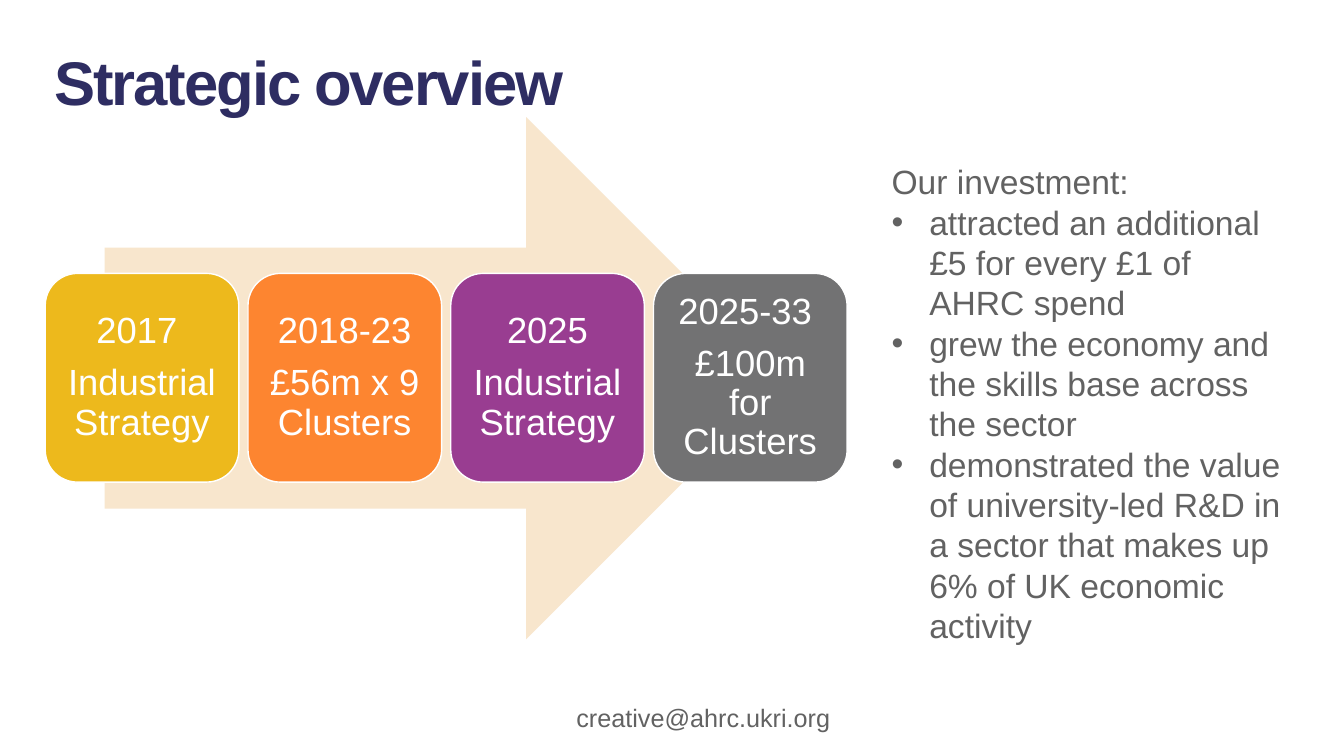
from dataclasses import dataclass

from lxml.etree import SubElement
from pptx import Presentation
from pptx.dml.color import RGBColor
from pptx.enum.shapes import MSO_SHAPE
from pptx.enum.text import MSO_ANCHOR, MSO_AUTO_SIZE, PP_ALIGN
from pptx.oxml.ns import qn
from pptx.shapes.autoshape import Shape
from pptx.slide import Slide
from pptx.text.text import TextFrame, _Paragraph
from pptx.util import Cm, Pt

GREY = "626262"
NAVY = "2E2D62"
WHITE = "FFFFFF"


@dataclass
class Stage:
    """One step on the timeline."""
    date: str
    label: str
    fill: str


STAGES = [
    Stage("2017 ", "Industrial Strategy", "EDB91C"),
    Stage("2018-23", "£56m x 9 Clusters", "FD8530"),
    Stage("2025", "Industrial Strategy", "993D91"),
    Stage("2025-33 ", "£100m for Clusters", "727273"),
]
INTRO = "Our investment:"
POINTS = [
    "attracted\u00a0an additional £5 for every £1 of AHRC spend",
    "grew the economy and the skills base across the sector",
    "demonstrated the value of university-led R&D in a\u00a0sector "
    "that makes up 6% of UK economic activity",
]


def color(code: str) -> RGBColor:
    """Turn a hex string into a colour."""
    return RGBColor.from_string(code)


def style(para: _Paragraph, size: float, code: str, align: PP_ALIGN = PP_ALIGN.LEFT) -> None:
    """Set the font and alignment of a paragraph."""
    para.alignment = align
    para.font.name = "Arial"
    para.font.size = Pt(size)
    para.font.color.rgb = color(code)


def place(shape: Shape, left: float, top: float, width: float, height: float) -> None:
    """Move and size a shape, in centimetres."""
    shape.left, shape.top = Cm(left), Cm(top)
    shape.width, shape.height = Cm(width), Cm(height)


def write(frame: TextFrame, lines: list[str]) -> list[_Paragraph]:
    """Fill a frame with one paragraph per line."""
    frame.word_wrap = True
    frame.text = "\n".join(lines)
    return list(frame.paragraphs)


def bullet(para: _Paragraph) -> None:
    """Give a paragraph a hanging bullet."""
    props = para._p.get_or_add_pPr()
    props.set("marL", str(Cm(0.95)))
    props.set("indent", str(Cm(-0.95)))
    SubElement(props, qn("a:buFont")).set("typeface", "Arial")
    SubElement(props, qn("a:buChar")).set("char", "•")


def add_title(slide: Slide) -> None:
    """Format the title placeholder."""
    title = slide.shapes.title
    place(title, 1.12, 0.97, 32.46, 2.13)
    frame = title.text_frame
    para = write(frame, ["Strategic overview"])[0]
    frame.auto_size = MSO_AUTO_SIZE.NONE
    frame.vertical_anchor = MSO_ANCHOR.TOP
    style(para, 44, NAVY)
    para.font.bold = True
    para.runs[0]._r.get_or_add_rPr().set("spc", "-150")


def add_arrow(slide: Slide) -> None:
    """Draw the wide arrow behind the stages."""
    arrow = slide.shapes.add_shape(
        MSO_SHAPE.RIGHT_ARROW, Cm(2.64), Cm(2.95), Cm(17.2), Cm(13.16))
    arrow.shadow.inherit = False
    arrow.fill.solid()
    arrow.fill.fore_color.rgb = color("F8E6CD")
    arrow.line.fill.background()


def add_stage(slide: Slide, stage: Stage, left: float) -> None:
    """Draw one rounded stage card."""
    card = slide.shapes.add_shape(
        MSO_SHAPE.ROUNDED_RECTANGLE, Cm(left), Cm(6.89), Cm(4.88), Cm(5.26))
    card.shadow.inherit = False
    card.fill.solid()
    card.fill.fore_color.rgb = color(stage.fill)
    card.line.color.rgb = color(WHITE)
    card.line.width = Pt(1)
    frame = card.text_frame
    frame.vertical_anchor = MSO_ANCHOR.MIDDLE
    frame.margin_left = frame.margin_right = Cm(0.28)
    frame.margin_top = frame.margin_bottom = Cm(0.28)
    for para in write(frame, [stage.date, stage.label]):
        style(para, 26, WHITE, PP_ALIGN.CENTER)
        para.line_spacing = 0.9
        para.space_after = Pt(9.1)


def add_points(slide: Slide) -> None:
    """Write the investment list on the right."""
    box = slide.shapes.add_textbox(Cm(22.22), Cm(3.94), Cm(10.52), Cm(12.57))
    intro, *points = write(box.text_frame, [INTRO, *POINTS])
    for para in points:
        bullet(para)
    for para in (intro, *points):
        style(para, 24, GREY)


def add_email(slide: Slide) -> None:
    """Write the contact address at the foot."""
    box = slide.shapes.add_textbox(Cm(14.12), Cm(17.58), Cm(7.21), Cm(1.02))
    box.text_frame.vertical_anchor = MSO_ANCHOR.MIDDLE
    para = write(box.text_frame, ["creative@ahrc.ukri.org"])[0]
    style(para, 18, GREY, PP_ALIGN.CENTER)


def main() -> None:
    """Build and save the slide."""
    deck = Presentation()
    deck.slide_width, deck.slide_height = Cm(33.87), Cm(19.05)
    slide = deck.slides.add_slide(deck.slide_layouts[5])
    add_title(slide)
    add_arrow(slide)
    for i, stage in enumerate(STAGES):
        add_stage(slide, stage, 1.14 + 5.11 * i)
    add_points(slide)
    add_email(slide)
    deck.save("out.pptx")


if __name__ == "__main__":
    main()
